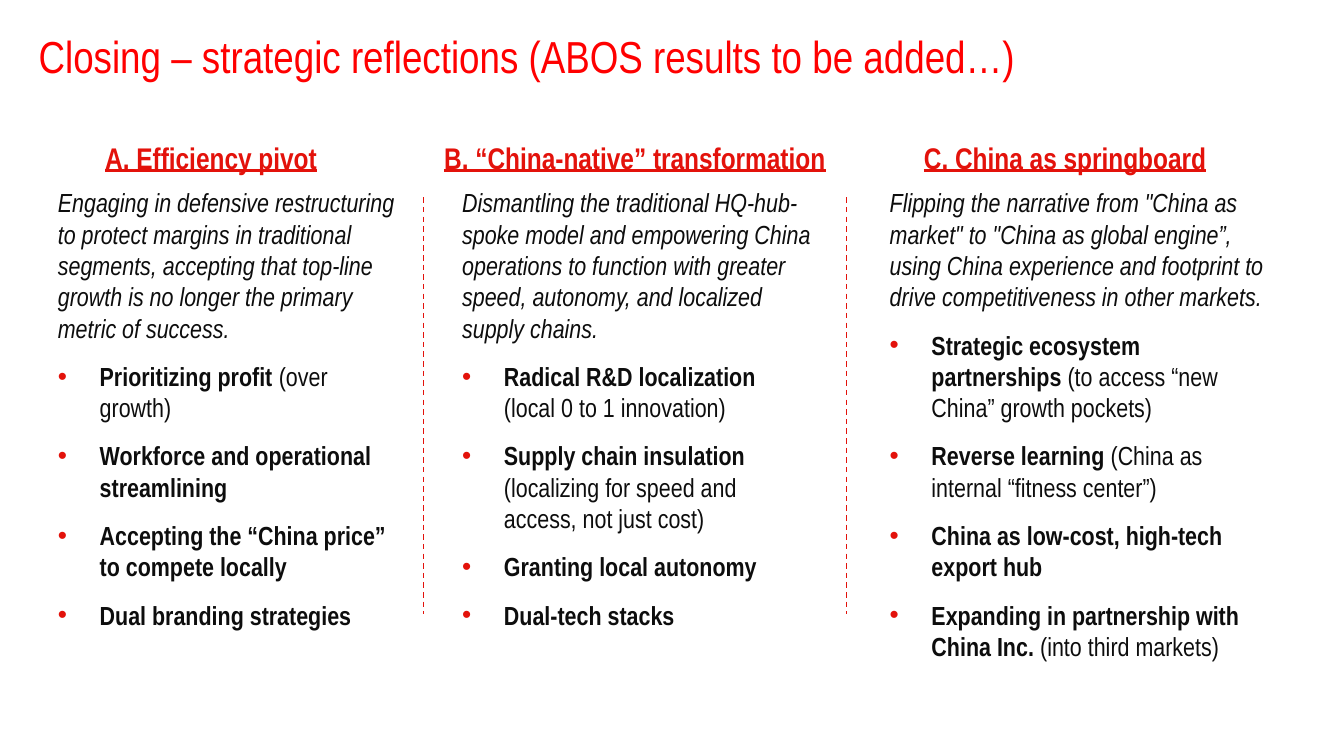
from lxml.etree import SubElement
from pptx import Presentation
from pptx.dml.color import RGBColor
from pptx.enum.dml import MSO_LINE
from pptx.enum.shapes import MSO_CONNECTOR
from pptx.enum.text import MSO_ANCHOR, MSO_AUTO_SIZE, PP_ALIGN
from pptx.oxml.ns import qn
from pptx.util import Cm, Pt

RED = "E3120B"
INK = "0D0D0D"


def paint(target, color):
    target.rgb = RGBColor.from_string(color)


def write(para, text, color, **style):
    run = para.add_run()
    run.text = text
    for name, value in {"name": "Arial Narrow", **style}.items():
        setattr(run.font, name, value)
    paint(run.font.color, color)


prs = Presentation()
prs.slide_width, prs.slide_height = Cm(25.4), Cm(14.29)
slide = prs.slides.add_slide(prs.slide_layouts[4])
title, *bodies, spare = slide.placeholders
spare.element.getparent().remove(spare.element)

title.left, title.top, title.width, title.height = Cm(0.48), Cm(0.28), Cm(24.71), Cm(1.55)
frame = title.text_frame
form = {"margin_left": Cm(0.25), "margin_right": Cm(0.25),
        "margin_top": Cm(0.25), "margin_bottom": Cm(0.25),
        "vertical_anchor": MSO_ANCHOR.MIDDLE,
        "auto_size": MSO_AUTO_SIZE.SHAPE_TO_FIT_TEXT}
for name, value in form.items():
    setattr(frame, name, value)
frame.paragraphs[0].alignment = PP_ALIGN.LEFT
write(frame.paragraphs[0], "Closing – strategic reflections (ABOS results to be added…)",
      "FF0000", size=Pt(24))

columns = [
    (0.84, 6.96, 8.71,
     "Engaging in defensive restructuring to protect margins in traditional segments, "
     "accepting that top-line growth is no longer the primary metric of success.",
     [("Prioritizing profit", "(over growth)"),
      ("Workforce and operational streamlining", ""),
      ("Accepting the “China price” to compete locally", ""),
      ("Dual branding strategies", "")]),
    (8.48, 7.11, 8.71,
     "Dismantling the traditional HQ-hub-spoke model and empowering China operations "
     "to function with greater speed, autonomy, and localized supply chains.",
     [("Radical R&D localization", "(local 0 to 1 innovation)"),
      ("Supply chain insulation", "(localizing for speed and access, not just cost)"),
      ("Granting local autonomy", ""),
      ("Dual-tech stacks", "")]),
    (16.56, 7.8, 9.32,
     "Flipping the narrative from \"China as market\" to \"China as global engine”, "
     "using China experience and footprint to drive competitiveness in other markets.",
     [("Strategic ecosystem partnerships", "(to access “new China” growth pockets)"),
      ("Reverse learning", "(China as internal “fitness center”)"),
      ("China as low-cost, high-tech export hub", ""),
      ("Expanding in partnership with China Inc.", "(into third markets)")]),
]
for body, (left, width, height, intro, points) in zip(bodies, columns):
    body.left, body.top, body.width, body.height = Cm(left), Cm(3.4), Cm(width), Cm(height)
    frame = body.text_frame
    form = {"word_wrap": True, "vertical_anchor": MSO_ANCHOR.TOP,
            "auto_size": MSO_AUTO_SIZE.SHAPE_TO_FIT_TEXT}
    for name, value in form.items():
        setattr(frame, name, value)
    para = frame.paragraphs[0]
    props = para._p.get_or_add_pPr()
    props.set("marL", "0")
    props.set("indent", "0")
    SubElement(props, qn("a:buNone"))
    para.space_before = Pt(0)
    write(para, intro, INK, size=Pt(14), italic=True, bold=False)
    for lead, note in points:
        para = frame.add_paragraph()
        props = para._p.get_or_add_pPr()
        props.set("marL", str(Cm(0.79)))
        props.set("indent", str(-Cm(0.79)))
        tint = SubElement(props, qn("a:buClr"))
        SubElement(tint, qn("a:srgbClr"), val=RED)
        SubElement(props, qn("a:buChar"), char="•")
        para.space_before = Pt(9)
        write(para, lead + " " if note else lead, INK, size=Pt(14), bold=True)
        if note:
            write(para, note, INK, size=Pt(14), bold=False)

for left in (8, 16):
    rule = slide.shapes.add_connector(MSO_CONNECTOR.STRAIGHT,
                                      Cm(left), Cm(3.73), Cm(left), Cm(11.61))
    paint(rule.line.color, RED)
    rule.line.width = Pt(0.75)
    rule.line.dash_style = MSO_LINE.DASH
    SubElement(rule._element.spPr, qn("a:effectLst"))

heads = [("A. Efficiency pivot", 1.22, 5.54),
         ("B. “China-native” transformation", 8.1, 7.8),
         ("C. China as springboard", 16.74, 6.78)]
for text, left, width in heads:
    box = slide.shapes.add_textbox(Cm(left), Cm(2.51), Cm(width), Cm(0.94))
    frame = box.text_frame
    frame.word_wrap = False
    frame.auto_size = MSO_AUTO_SIZE.SHAPE_TO_FIT_TEXT
    frame.paragraphs[0].alignment = PP_ALIGN.CENTER
    write(frame.paragraphs[0], text, RED, size=Pt(16), bold=True, underline=True)

prs.save("out.pptx")
